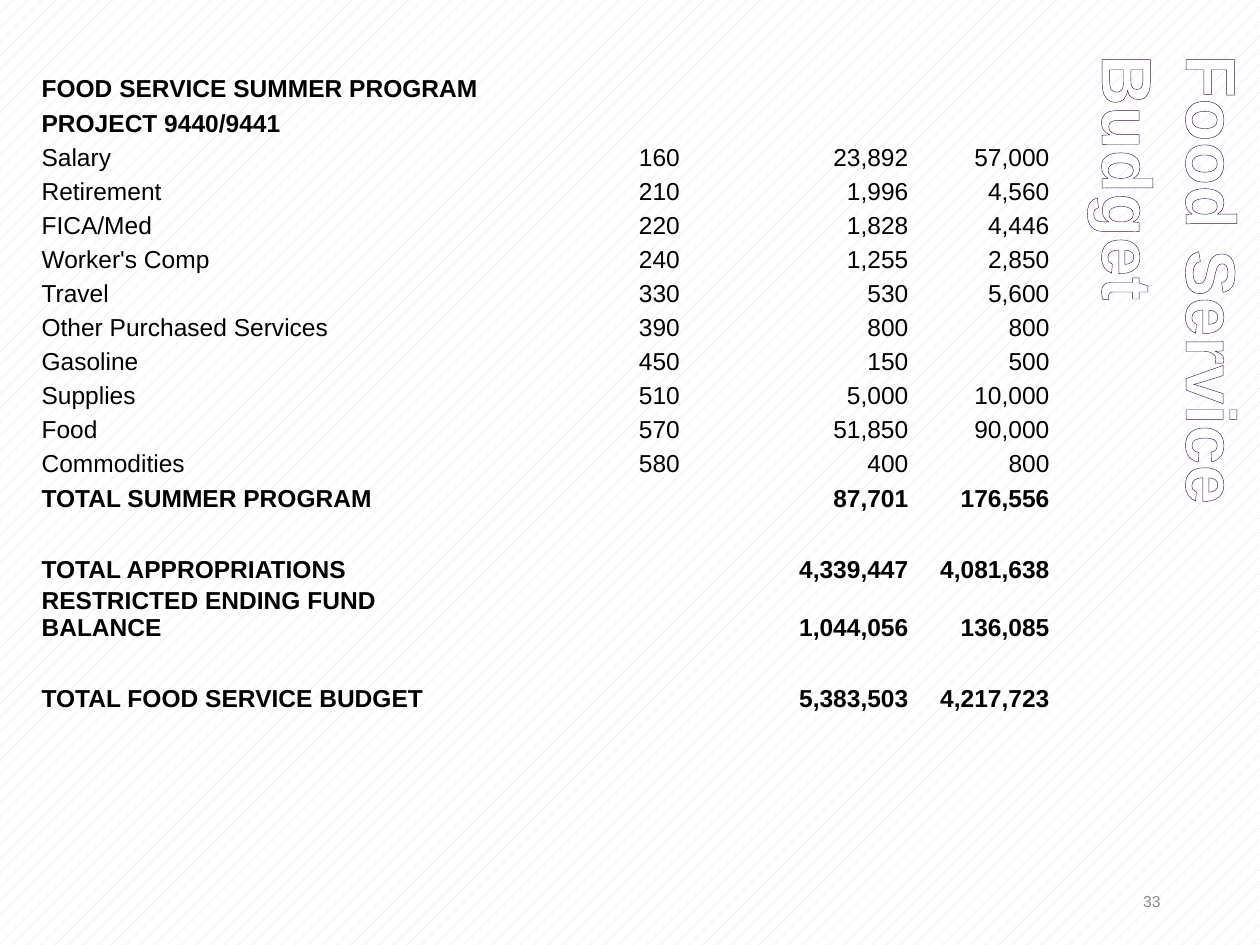
import pptx
import pptx.util
import pptx.dml.color
import pptx.enum.dml
import pptx.enum.text
from lxml import etree
from pptx.oxml.ns import qn

Inches, Pt = pptx.util.Inches, pptx.util.Pt
ALIGN, ANCHOR = pptx.enum.text.PP_ALIGN, pptx.enum.text.MSO_ANCHOR

WIDTH, HEIGHT = Inches(10), Inches(7.5)
FONT = "Arial"
COLORS = {"ink": "000000", "paper": "FFFFFF", "hatch": "E3D1F1",
          "outline": "381850", "page": "8C8C8C"}
PLAIN_STYLE = "{2D5ABB26-0587-4C30-8999-92F81FD0307C}"
BODY_SIZE = 14

COLUMN_SHARES = (0.45, 0.06, 0.13, 0.22, 0.14)
ITEM_ROW, HEADING_ROW = 0.27, 0.28
# Label, object code, and the two budget amounts; rows without a code are bold.
BUDGET = [
    ("FOOD SERVICE SUMMER PROGRAM", "", "", ""),
    ("PROJECT 9440/9441", "", "", ""),
    ("Salary", "160 ", "23,892", "57,000"),
    ("Retirement", "210 ", "1,996", "4,560"),
    ("FICA/Med", "220 ", "1,828", "4,446"),
    ("Worker's Comp", "240 ", "1,255", "2,850"),
    ("Travel", "330 ", "530", "5,600"),
    ("Other Purchased Services", "390 ", "800", "800"),
    ("Gasoline", "450 ", "150", "500"),
    ("Supplies", "510 ", "5,000", "10,000"),
    ("Food", "570 ", "51,850", "90,000"),
    ("Commodities", "580 ", "400", "800"),
    ("TOTAL SUMMER PROGRAM", "", "87,701", "176,556"),
    ("", "", "", ""),
    ("TOTAL APPROPRIATIONS", "", "4,339,447", "4,081,638"),
    ("RESTRICTED ENDING FUND BALANCE", "", "1,044,056", "136,085"),
    ("", "", "", ""),
    ("TOTAL FOOD SERVICE BUDGET", "", "5,383,503", "4,217,723"),
    ("", "", "", ""),
]


def rgb(name):
    return pptx.dml.color.RGBColor.from_string(COLORS[name])


def share_box(left, top, width, height):
    """Turn shares of the slide into left, top, width and height."""
    return (int(left * WIDTH), int(top * HEIGHT),
            int(width * WIDTH), int(height * HEIGHT))


def write(frame, text, size=BODY_SIZE, color="ink", bold=False, align=ALIGN.LEFT):
    """Write one run; an empty text only sets the height of its line."""
    paragraph = frame.paragraphs[0]
    paragraph.alignment = align
    if not text:
        etree.SubElement(paragraph._p, qn("a:endParaRPr"), sz=str(size * 100))
        return None
    run = paragraph.add_run()
    run.text = text
    run.font.name, run.font.size, run.font.bold = FONT, Pt(size), bold
    run.font.color.rgb = rgb(color)
    return run


def outline_letters(run, color, width):
    properties = run.font._element
    properties.set("spc", "50")
    line = etree.Element(qn("a:ln"), w=str(int(Pt(width))))
    fill = etree.SubElement(line, qn("a:solidFill"))
    etree.SubElement(fill, qn("a:srgbClr"), val=COLORS[color])
    properties.insert(0, line)


def draw_background(slide):
    fill = slide.background.fill
    fill.patterned()
    fill.pattern = pptx.enum.dml.MSO_PATTERN.PERCENT_10
    fill.fore_color.rgb = rgb("hatch")
    fill.back_color.rgb = rgb("paper")


def draw_side_title(slide, box):
    title = slide.shapes.title
    title.left, title.top, title.width, title.height = box
    title.rotation = 90
    frame = title.text_frame
    frame.word_wrap = True
    frame.auto_size = pptx.enum.text.MSO_AUTO_SIZE.NONE
    frame.vertical_anchor = ANCHOR.BOTTOM
    frame.margin_right = Inches(0.2)
    heading = write(frame, "Food Service Budget", size=40, color="paper", bold=True)
    outline_letters(heading, "outline", 1.05)


def draw_page_number(slide, box):
    frame = slide.shapes.add_textbox(*box).text_frame
    frame.word_wrap = True
    frame.vertical_anchor = ANCHOR.MIDDLE
    write(frame, "33", size=9, color="page", align=ALIGN.RIGHT)


def draw_budget(slide, box):
    budget = slide.shapes.add_table(len(BUDGET), len(COLUMN_SHARES), *box).table
    budget.first_row = budget.horz_banding = False
    budget._tbl.tblPr.find(qn("a:tableStyleId")).text = PLAIN_STYLE
    for column, share in zip(budget.columns, COLUMN_SHARES):
        column.width = int(box[2] * share)
    for row, (label, code, *amounts) in zip(budget.rows, BUDGET):
        row.height = Inches(ITEM_ROW if code else HEADING_ROW)
        for index, text in enumerate((label, "", code, *amounts)):
            cell = row.cells[index]
            cell.fill.background()
            cell.vertical_anchor = ANCHOR.BOTTOM
            cell.margin_left = cell.margin_right = 0
            cell.margin_top = cell.margin_bottom = 0
            write(cell.text_frame, text, bold=not code,
                  align=ALIGN.RIGHT if index else ALIGN.LEFT)


def main():
    deck = pptx.Presentation()
    deck.slide_width, deck.slide_height = WIDTH, HEIGHT
    slide = deck.slides.add_slide(deck.slide_layouts[5])
    draw_background(slide)
    draw_page_number(slide, share_box(0.706, 0.927, 0.225, 0.053))
    draw_side_title(slide, share_box(0.617, 0.367, 0.583, 0.133))
    draw_budget(slide, share_box(0.033, 0.071, 0.8, 0.7))
    deck.save("out.pptx")


if __name__ == "__main__":
    main()
